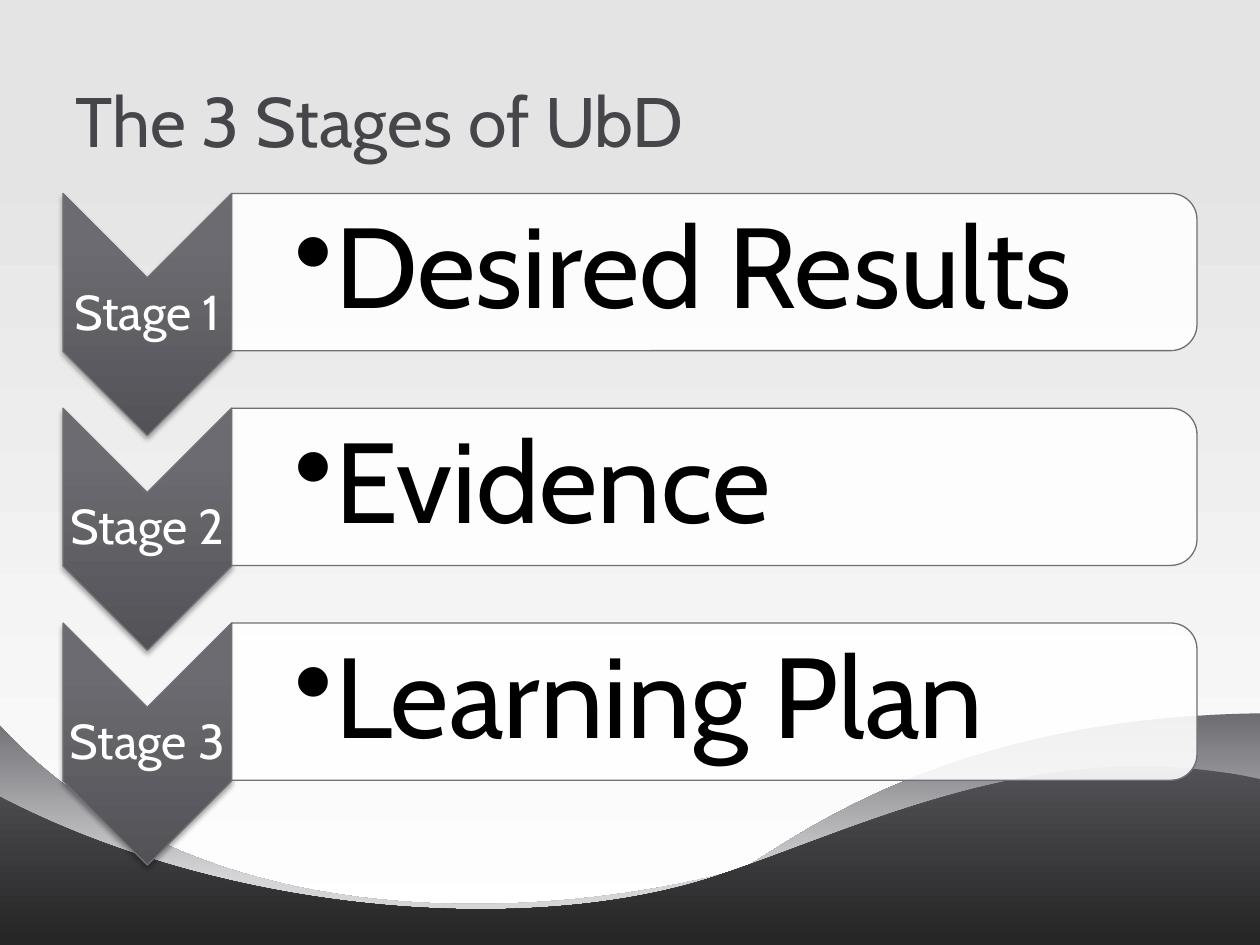
from lxml.etree import SubElement
from pptx import Presentation
from pptx.dml.color import RGBColor
from pptx.enum.shapes import MSO_SHAPE
from pptx.enum.text import MSO_ANCHOR, PP_ALIGN
from pptx.oxml.ns import qn
from pptx.util import Cm, Pt

TITLE = "The 3 Stages of UbD"
STAGES = [
    ("Stage 1", "Desired Results"),
    ("Stage 2", "Evidence"),
    ("Stage 3", "Learning Plan"),
]

THEME = {
    "font": "Cabin",
    "title": (40, "46464A"),
    "stage": (28, "FFFFFF"),
    "detail": (65, "000000"),
    "line": "6F6F74",
    "bar": "FFFFFF",
    "shadow": "000000",
    # gradients: (position in percent, colour)
    "background": [(0, "FFFFFF"), (85, "E4E4E5")],
    "chevron": [(0, "525257"), (80, "6B6B71")],
    "back_wave": [(0, "6C6C71"), (71, "D5D5D7")],
    "front_wave": [(0, "535357"), (96, "262627")],
}

# Upper edge of each wave in cm: a start point, then cubic curves to the right
WAVES = [
    ("back_wave", (0, 14.63), [
        ((4.95, 20.04), (14.07, 17.83), (14.96, 17.5)),
        ((15.6, 17.27), (18.72, 14.45), (25.45, 14.38)),
    ]),
    ("front_wave", (-0.03, 16.05), [
        ((4.62, 18.49), (10.85, 18.9), (14.53, 17.63)),
        ((16.97, 16.81), (19.79, 15.42), (23.16, 15.44)),
        ((23.9, 15.47), (24.66, 15.54), (25.45, 15.72)),
    ]),
]

SLIDE_W, SLIDE_H = 25.4, 19.05
TOP, PITCH = 3.9, 4.33
CHEVRON_X, CHEVRON_W, CHEVRON_H = 1.27, 3.4, 4.88
BAR_X, BAR_W, BAR_H = CHEVRON_X + CHEVRON_W, 19.46, 3.17
STAGE_DY, STAGE_H = 1.71, 1.45
DETAIL_DY, DETAIL_W, DETAIL_H = 0.16, 19.3, 2.85
BULLET_INDENT = Cm(0.79)


def rgb(name):
    return RGBColor.from_string(name)


def set_gradient(fill, colours, angle):
    """Fill with two stops; the angle runs counter-clockwise from the right."""
    fill.gradient()
    fill.gradient_angle = angle
    for stop, (position, colour) in zip(fill.gradient_stops, colours):
        stop.position = position / 100
        stop.color.rgb = rgb(colour)


def add_wave(s, colours, start, curves):
    """Outline the wave with straight segments, then bend its upper edge."""
    ends = [curve[-1] for curve in curves]
    corners = [(ends[-1][0], SLIDE_H), (start[0], SLIDE_H)]
    builder = s.shapes.build_freeform(Cm(start[0]), Cm(start[1]))
    builder.add_line_segments([(Cm(x), Cm(y)) for x, y in ends + corners], close=True)
    sp = builder.convert_to_shape()
    segments = list(sp._element.iter(qn("a:lnTo")))
    for segment, curve in zip(segments, curves):
        segment.tag = qn("a:cubicBezTo")
        segment.clear()
        for x, y in curve:
            SubElement(segment, qn("a:pt"), x=str(Cm(x) - sp.left), y=str(Cm(y) - sp.top))
    sp.shadow.inherit = False
    sp.line.fill.background()
    set_gradient(sp.fill, colours, 270)


def add_turned_shape(s, kind, x, y, w, h):
    """Place a shape turned by 90 degrees so that it covers the given box."""
    sp = s.shapes.add_shape(kind, Cm(x + (w - h) / 2), Cm(y + (h - w) / 2), Cm(h), Cm(w))
    sp.rotation = 90
    sp.shadow.inherit = False
    sp.line.color.rgb = rgb(THEME["line"])
    sp.line.width = Pt(0.75)
    return sp


def add_shadow(sp):
    effects = sp._element.spPr.find(qn("a:effectLst"))
    shadow = SubElement(effects, qn("a:outerShdw"), blurRad=str(Pt(3.1)),
                        dist=str(Pt(1.8)), dir="5400000", rotWithShape="0")
    colour = SubElement(shadow, qn("a:srgbClr"), val=THEME["shadow"])
    SubElement(colour, qn("a:alpha"), val="35000")


def add_run(p, text, style):
    size, colour = THEME[style]
    r = p.add_run()
    r.text = text
    r.font.name = THEME["font"]
    r.font.size = Pt(size)
    r.font.color.rgb = rgb(colour)


def add_text(s, x, y, w, h, inset, left_inset):
    """Add a middle-anchored text box and return its paragraph."""
    tf = s.shapes.add_textbox(Cm(x), Cm(y), Cm(w), Cm(h)).text_frame
    tf.word_wrap = True
    tf.vertical_anchor = MSO_ANCHOR.MIDDLE
    tf.margin_left = Cm(left_inset)
    tf.margin_top = tf.margin_right = tf.margin_bottom = Cm(inset)
    p = tf.paragraphs[0]
    p.line_spacing = 0.9
    return p


def add_stage(s, y, stage, detail):
    chevron = add_turned_shape(s, MSO_SHAPE.CHEVRON, CHEVRON_X, y, CHEVRON_W, CHEVRON_H)
    set_gradient(chevron.fill, THEME["chevron"], 180)
    add_shadow(chevron)
    p = add_text(s, CHEVRON_X, y + STAGE_DY, CHEVRON_W, STAGE_H, 0.05, 0.05)
    p.alignment = PP_ALIGN.CENTER
    add_run(p, stage, "stage")

    bar = add_turned_shape(s, MSO_SHAPE.ROUND_2_SAME_RECTANGLE, BAR_X, y, BAR_W, BAR_H)
    bar.fill.solid()
    bar.fill.fore_color.rgb = rgb(THEME["bar"])
    colour = bar._element.spPr.find(qn("a:solidFill")).find(qn("a:srgbClr"))
    SubElement(colour, qn("a:alpha"), val="90000")
    p = add_text(s, BAR_X, y + DETAIL_DY, DETAIL_W, DETAIL_H, 0.13, 1.27)
    p.level = 1
    pPr = p._p.get_or_add_pPr()
    pPr.set("marL", str(BULLET_INDENT))
    pPr.set("indent", str(-BULLET_INDENT))
    SubElement(pPr, qn("a:buChar"), char="••")
    add_run(p, detail, "detail")


def main():
    prs = Presentation()
    prs.slide_width, prs.slide_height = Cm(SLIDE_W), Cm(SLIDE_H)
    s = prs.slides.add_slide(prs.slide_layouts[5])
    set_gradient(s.background.fill, THEME["background"], 90)

    for name, start, curves in WAVES:
        add_wave(s, THEME[name], start, curves)

    title = s.shapes.title
    title.left, title.top, title.width, title.height = Cm(1.27), Cm(0.76), Cm(22.86), Cm(2.62)
    tf = title.text_frame
    tf.vertical_anchor = MSO_ANCHOR.BOTTOM
    p = tf.paragraphs[0]
    p.alignment = PP_ALIGN.LEFT
    add_run(p, TITLE, "title")

    for i, (stage, detail) in enumerate(STAGES):
        add_stage(s, TOP + i * PITCH, stage, detail)

    prs.save("out.pptx")


if __name__ == "__main__":
    main()
